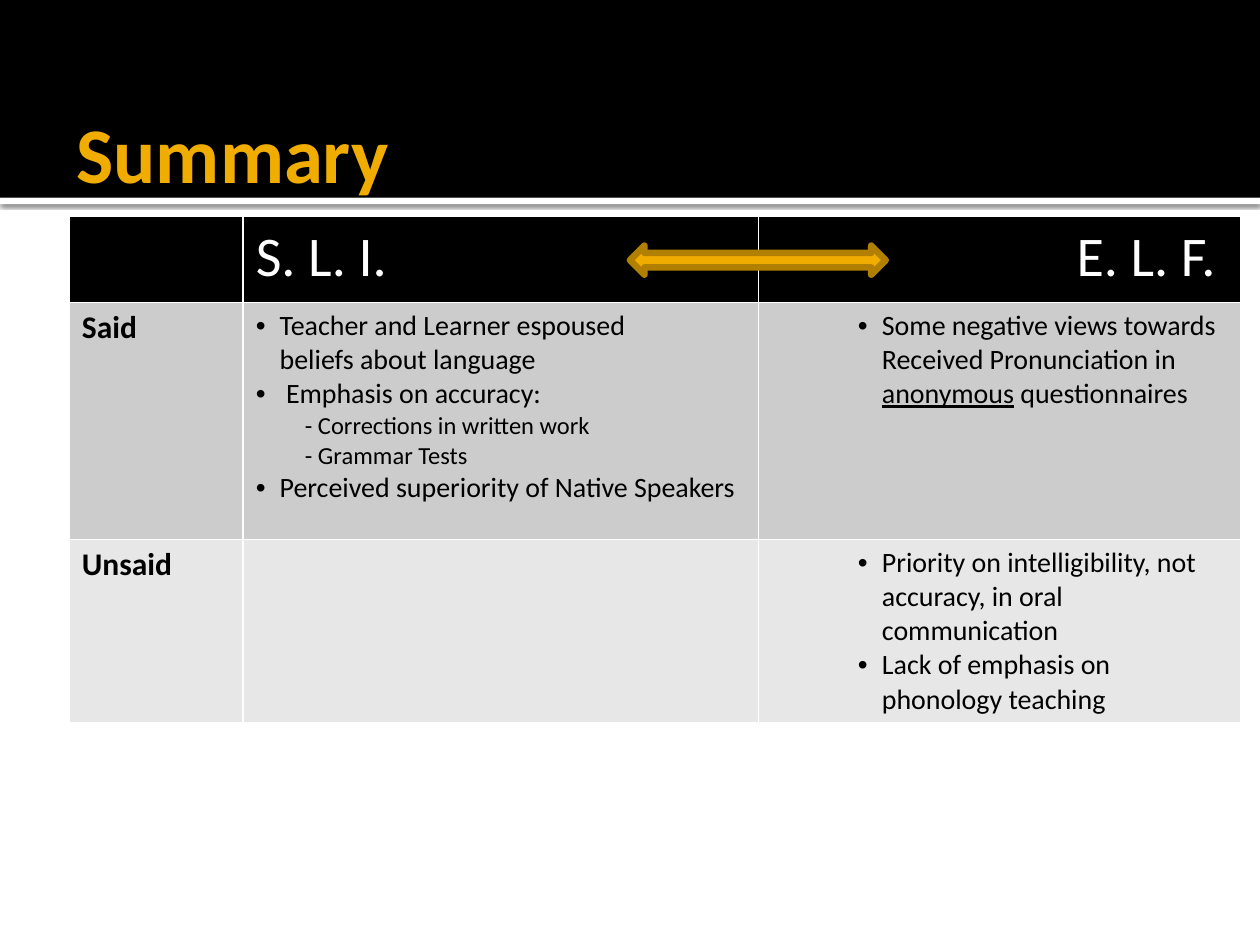
import pptx
import pptx.util
import pptx.dml.color
import pptx.enum.shapes
import pptx.enum.text
import pptx.oxml
import pptx.oxml.ns

Inches = pptx.util.Inches
Pt = pptx.util.Pt
RGBColor = pptx.dml.color.RGBColor
MSO_SHAPE = pptx.enum.shapes.MSO_SHAPE
PP_ALIGN = pptx.enum.text.PP_ALIGN
qn = pptx.oxml.ns.qn

BLACK = RGBColor(0x00, 0x00, 0x00)
WHITE = RGBColor(0xFF, 0xFF, 0xFF)
GOLD = RGBColor(0xF0, 0xAD, 0x00)
DARK_GOLD = RGBColor(0xB2, 0x80, 0x00)
GREY = RGBColor(0xCC, 0xCC, 0xCC)
LIGHT_GREY = RGBColor(0xE7, 0xE7, 0xE7)
FONT = "Calibri"
NS = 'xmlns:a="http://schemas.openxmlformats.org/drawingml/2006/main"'

COLS = [1.38, 4.09, 3.83]
ROWS = [0.68, 1.88, 1.46]
FILLS = [BLACK, GREY, LIGHT_GREY]

SLI_SAID = [
    ("Teacher and Learner espoused", 16, 0.19, True),
    ("beliefs about language", 16, 0.19, False),
    (" Emphasis on accuracy:", 16, 0.19, True),
    ("- Corrections in written work", 14, 0.39, False),
    ("- Grammar Tests", 14, 0.39, False),
    ("Perceived superiority of Native Speakers", 16, 0.19, True),
]
ELF_SAID = [
    ("Some negative views towards Received Pronunciation in |anonymous| questionnaires",
     16, 0.88, True),
]
ELF_UNSAID = [
    ("Priority on intelligibility, not accuracy, in oral communication", 16, 0.88, True),
    ("Lack of emphasis on phonology teaching", 16, 0.88, True),
]


def style(p, size, color, bold=False):
    p.font.name = FONT
    p.font.size = Pt(size)
    p.font.bold = bold
    p.font.color.rgb = color


def add_block(s, kind, x, y, w, h, fill):
    sp = s.shapes.add_shape(kind, Inches(x), Inches(y), Inches(w), Inches(h))
    sp.shadow.inherit = False
    sp.fill.solid()
    sp.fill.fore_color.rgb = fill
    sp.line.fill.background()
    return sp


def add_header(s, x, y, w, h):
    stripe = add_block(s, MSO_SHAPE.RECTANGLE, x, y + h, w, 0.05, WHITE)
    effects = stripe._element.spPr.find(qn("a:effectLst"))
    effects.append(pptx.oxml.parse_xml(
        f'<a:outerShdw {NS} blurRad="{Pt(2.5)}" dist="{Pt(0.8)}" dir="5400000" '
        'rotWithShape="0"><a:srgbClr val="000000"><a:alpha val="60000"/>'
        '</a:srgbClr></a:outerShdw>'))
    add_block(s, MSO_SHAPE.RECTANGLE, x, y, w, h, BLACK)
    title = s.shapes.add_textbox(Inches(x + 0.51), Inches(y + 0.52), Inches(9), Inches(1.37))
    tf = title.text_frame
    tf.word_wrap = True
    tf.vertical_anchor = pptx.enum.text.MSO_ANCHOR.MIDDLE
    tf.margin_right = Inches(0.05)
    p = tf.paragraphs[0]
    p.text = "Summary"
    style(p, 45, GOLD, True)


def set_borders(cell):
    tc_pr = cell._tc.get_or_add_tcPr()
    for i, side in enumerate(("lnL", "lnR", "lnT", "lnB")):
        tc_pr.insert(i, pptx.oxml.parse_xml(
            f'<a:{side} {NS} w="{Pt(1)}"><a:solidFill><a:srgbClr val="{WHITE}"/>'
            f'</a:solidFill></a:{side}>'))


def fill_list(cell, items):
    tf = cell.text_frame
    for i, (text, size, left, bullet) in enumerate(items):
        p = tf.add_paragraph() if i else tf.paragraphs[0]
        p_pr = p._p.get_or_add_pPr()
        p_pr.set("marL", str(Inches(left)))
        p_pr.set("indent", str(Inches(-0.19 if bullet else 0)))
        if bullet:
            p_pr.append(pptx.oxml.parse_xml(f'<a:buFont {NS} typeface="Arial"/>'))
            p_pr.append(pptx.oxml.parse_xml(f'<a:buChar {NS} char="•"/>'))
        for j, part in enumerate(text.split("|")):
            r = p.add_run()
            r.text = part
            if j % 2:
                r.font.underline = True
        style(p, size, BLACK)


def add_summary_table(s, x, y):
    frame = s.shapes.add_table(len(ROWS), len(COLS), Inches(x), Inches(y),
                               Inches(sum(COLS)), Inches(sum(ROWS)))
    table = frame.table
    for col, width in zip(table.columns, COLS):
        col.width = Inches(width)
    for i, (height, fill) in enumerate(zip(ROWS, FILLS)):
        table.rows[i].height = Inches(height)
        for cell in table.rows[i].cells:
            cell.fill.solid()
            cell.fill.fore_color.rgb = fill
            set_borders(cell)
    labels = [
        (0, 1, "S. L. I.", 32, WHITE, False, PP_ALIGN.LEFT),
        (0, 2, "E. L. F. ", 32, WHITE, False, PP_ALIGN.RIGHT),
        (1, 0, "Said", 18, BLACK, True, PP_ALIGN.LEFT),
        (2, 0, "Unsaid", 18, BLACK, True, PP_ALIGN.LEFT),
    ]
    for row, col, text, size, color, bold, align in labels:
        p = table.cell(row, col).text_frame.paragraphs[0]
        p.text = text
        p.alignment = align
        style(p, size, color, bold)
    fill_list(table.cell(1, 1), SLI_SAID)
    fill_list(table.cell(1, 2), ELF_SAID)
    fill_list(table.cell(2, 2), ELF_UNSAID)


def add_arrow(s, x, y, w, h):
    arrow = add_block(s, MSO_SHAPE.LEFT_RIGHT_ARROW, x, y, w, h, GOLD)
    arrow.line.color.rgb = DARK_GOLD
    arrow.line.width = Pt(3.78)


def main():
    prs = pptx.Presentation()
    prs.slide_width = Inches(10)
    prs.slide_height = Inches(7.5)
    s = prs.slides.add_slide(prs.slide_layouts[6])
    add_header(s, 0, 0, 10, 1.57)
    add_summary_table(s, 0.55, 1.72)
    add_arrow(s, 5, 1.95, 2.03, 0.23)
    prs.save("out.pptx")


if __name__ == "__main__":
    main()
